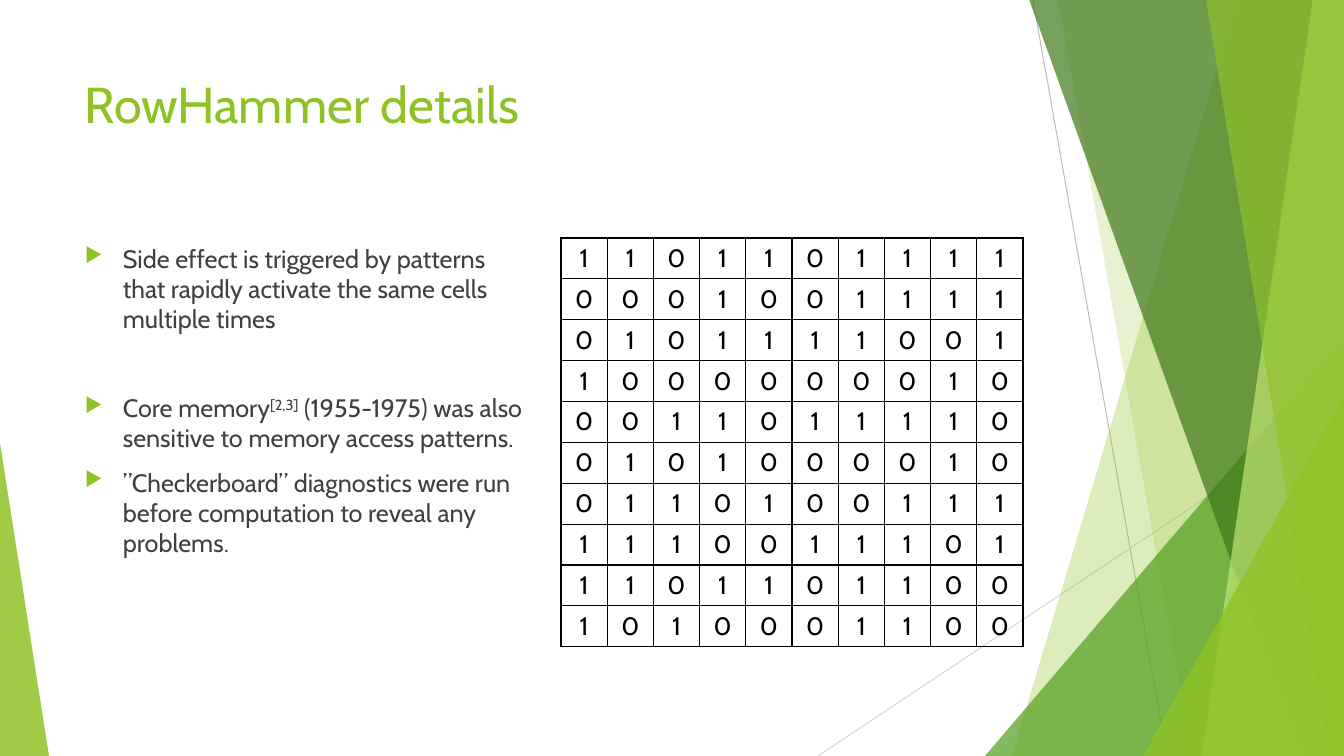
from dataclasses import dataclass

from lxml import etree
from pptx import Presentation, util as u
from pptx.dml.color import RGBColor
from pptx.enum import shapes, text
from pptx.oxml import ns

EMU_PER_PX = 914400 / 100.8
WIDTH, HEIGHT = 1344, 756
FONT = "Cabin"
COLORS = {
    "green": "90C226", "leaf": "54A021", "forest": "3F7819", "lime": "C0E474",
    "body": "404040", "black": "000000", "gray": "BFBFBF", "pale gray": "D9D9D9",
}


@dataclass
class Line:
    start: tuple[int, int]
    end: tuple[int, int]
    color: str


@dataclass
class Panel:
    """Band from a slanted left edge to the right side of the slide."""
    top_x: int
    bottom_x: int
    color: str
    opacity: int


@dataclass
class Triangle:
    """Right triangle on the slide's bottom edge; apex 0 is left, 1 is right."""
    left: int
    top: int
    width: int
    apex: int
    color: str
    opacity: int


@dataclass
class Bullet:
    runs: list[tuple[str, bool]]  # wording, superscript
    space_before: int = 10


LINES = [
    Line((1033, 0), (1167, HEIGHT), "gray"),
    Line((WIDTH, 406), (818, HEIGHT), "pale gray"),
]
FACETS = [
    Panel(1238, 1012, "green", 30),
    Panel(1058, 1192, "green", 20),
    Triangle(985, 336, 359, 1, "leaf", 72),
    Panel(1029, 1301, "forest", 70),
    Panel(1313, 1202, "lime", 70),
    Panel(1206, 1329, "green", 65),
    Triangle(1143, 396, 201, 1, "green", 80),
    Triangle(0, 443, 49, 0, "green", 85),
]
BULLETS = [
    Bullet([("Side effect is triggered by patterns that rapidly activate "
             "the same cells multiple times", False)]),
    Bullet([("Core memory", False), ("[2,3]", True),
            (" (1955-1975) was also sensitive to memory access patterns.", False)],
           space_before=42),
    Bullet([("”Checkerboard” diagnostics were run before computation "
             "to reveal any problems.", False)]),
]
MEMORY_ROWS = [
    "1101101111", "0001001111", "0101111001", "1000000010", "0011011110",
    "0101000010", "0110100111", "1110011101", "1101101100", "1010001100",
]


def px(length: int) -> u.Emu:
    return u.Emu(round(length * EMU_PER_PX))


def rgb(name: str) -> RGBColor:
    return RGBColor.from_string(COLORS[name])


def add_xml(parent, tag: str, **attributes: str):
    return etree.SubElement(parent, ns.qn(tag), attributes)


def set_font(font, size: int, color: str) -> None:
    font.name, font.size = FONT, u.Pt(size)
    font.color.rgb = rgb(color)


def draw_line(page, line: Line) -> None:
    connector = page.shapes.add_connector(
        shapes.MSO_CONNECTOR.STRAIGHT, *map(px, line.start + line.end))
    connector.line.color.rgb = rgb(line.color)
    connector.line.width = u.Pt(0.75)
    add_xml(connector._element.spPr, "a:effectLst")


def draw_facet(page, facet: Panel | Triangle) -> None:
    if isinstance(facet, Panel):
        builder = page.shapes.build_freeform(facet.top_x, -1, scale=EMU_PER_PX)
        builder.add_line_segments(
            [(WIDTH, -1), (WIDTH, HEIGHT), (facet.bottom_x, HEIGHT)], close=True)
        shape = builder.convert_to_shape()
    else:
        shape = page.shapes.add_shape(
            shapes.MSO_SHAPE.ISOSCELES_TRIANGLE, px(facet.left), px(facet.top),
            px(facet.width), px(HEIGHT - facet.top))
        shape.adjustments[0] = facet.apex
    shape.shadow.inherit = False
    shape.line.fill.background()
    shape.fill.solid()
    shape.fill.fore_color.rgb = rgb(facet.color)
    color = shape._element.spPr.find(ns.qn("a:solidFill"))[0]
    add_xml(color, "a:alpha", val=str(facet.opacity * 1000))


def add_text_frame(page, left: int, top: int, width: int, height: int):
    frame = page.shapes.add_textbox(*map(px, (left, top, width, height))).text_frame
    frame.word_wrap = True
    return frame


def draw_title(page) -> None:
    para = add_text_frame(page, 75, 68, 948, 145).paragraphs[0]
    para.text = "RowHammer details"
    set_font(para.font, 36, "green")


def add_bullet_marker(para) -> None:
    properties = para._p.get_or_add_pPr()
    indent = px(38)
    properties.set("marL", str(indent))
    properties.set("indent", str(-indent))
    color = add_xml(properties, "a:buClr")
    add_xml(color, "a:srgbClr", val=COLORS["green"])
    add_xml(properties, "a:buSzPct", val="80000")
    add_xml(properties, "a:buChar", char="▶")


def draw_bullets(page) -> None:
    frame = add_text_frame(page, 75, 238, 462, 427)
    for index, bullet in enumerate(BULLETS):
        para = frame.add_paragraph() if index else frame.paragraphs[0]
        para.space_before = u.Pt(bullet.space_before)
        add_bullet_marker(para)
        set_font(para.font, 18, "body")
        for wording, superscript in bullet.runs:
            span = para.add_run()
            span.text = wording
            if superscript:
                span.font._element.set("baseline", "30000")


def add_borders(cell) -> None:
    properties = cell._tc.get_or_add_tcPr()
    for position, side in enumerate(("a:lnL", "a:lnR", "a:lnT", "a:lnB")):
        border = etree.Element(ns.qn(side), w=str(u.Pt(1)))
        fill = add_xml(border, "a:solidFill")
        add_xml(fill, "a:srgbClr", val=COLORS["black"])
        properties.insert(position, border)


def draw_memory_table(page) -> None:
    rows, columns = len(MEMORY_ROWS), len(MEMORY_ROWS[0])
    table = page.shapes.add_table(
        rows, columns, px(561), px(238), px(462), px(409)).table
    table.first_row = table.horz_banding = False
    for row, bits in enumerate(MEMORY_ROWS):
        for column, bit in enumerate(bits):
            cell = table.cell(row, column)
            cell.fill.background()
            add_borders(cell)
            para = cell.text_frame.paragraphs[0]
            para.text = bit
            para.alignment = text.PP_ALIGN.CENTER
            set_font(para.font, 18, "black")


def main() -> None:
    deck = Presentation()
    deck.slide_width, deck.slide_height = px(WIDTH), px(HEIGHT)
    page = deck.slides.add_slide(deck.slide_layouts[6])
    for line in LINES:
        draw_line(page, line)
    for facet in FACETS:
        draw_facet(page, facet)
    draw_title(page)
    draw_bullets(page)
    draw_memory_table(page)
    deck.save("out.pptx")


if __name__ == "__main__":
    main()
